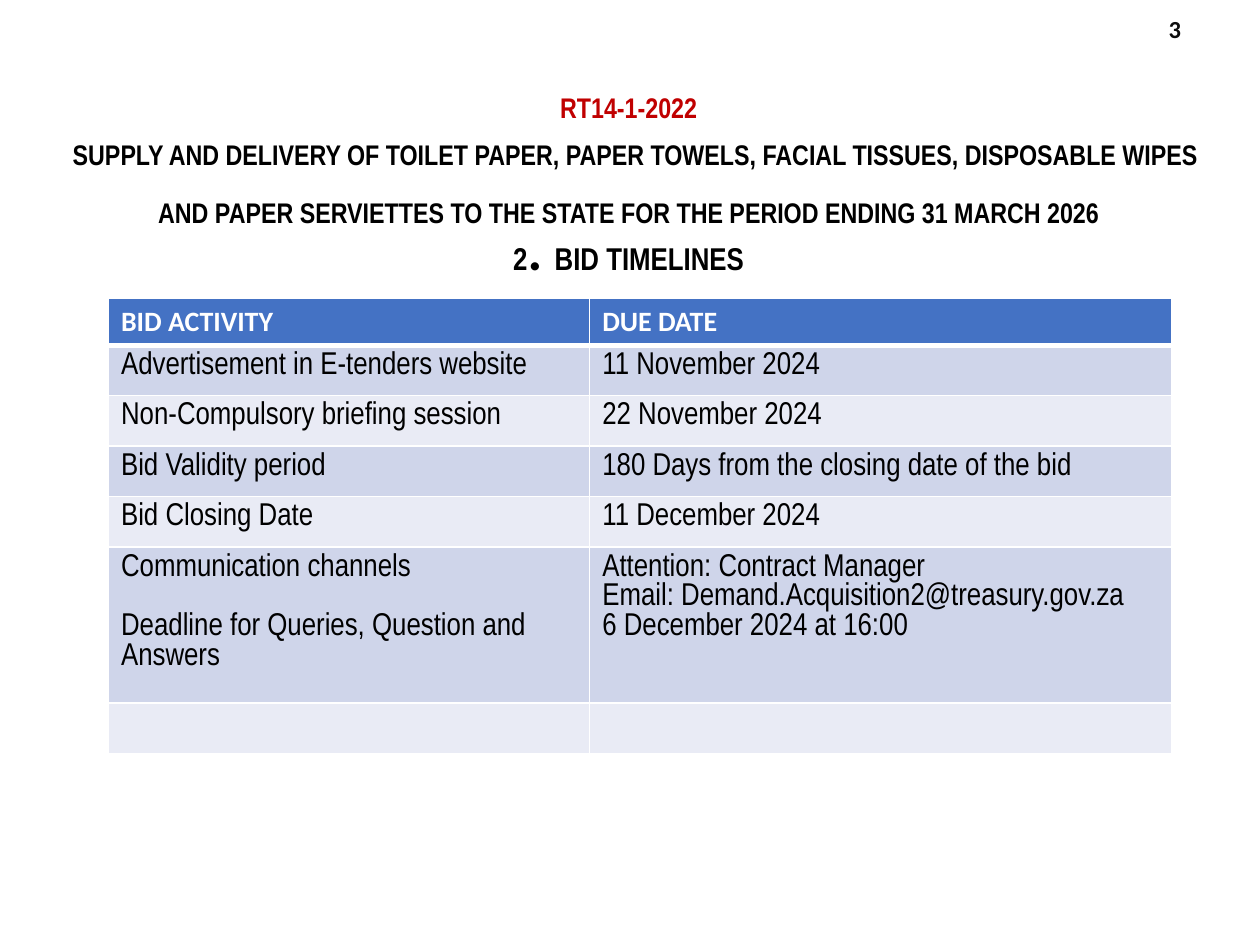
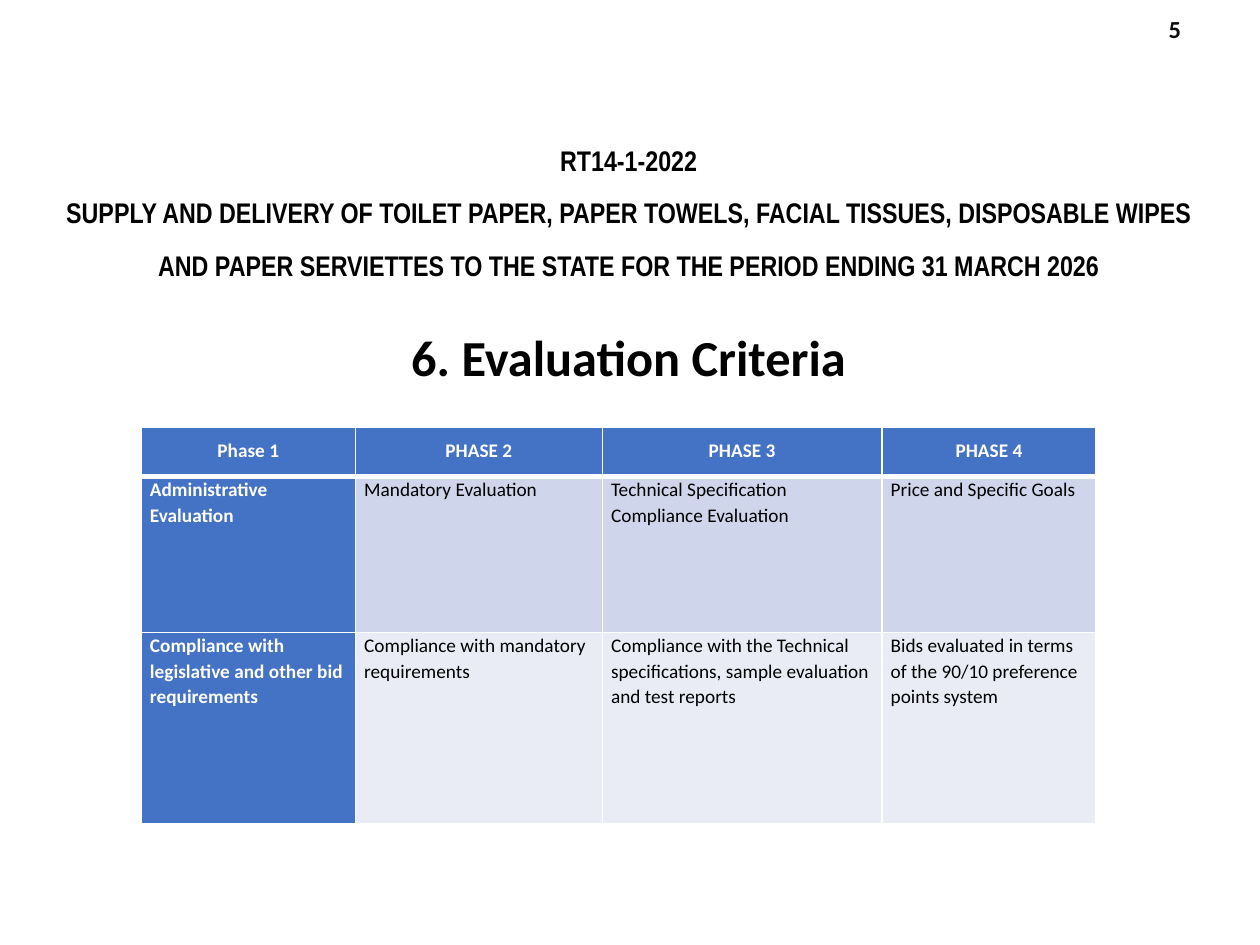
"""Build two bid briefing slides: the bid timelines and the evaluation criteria."""
from pptx import Presentation
from pptx.dml.color import RGBColor
from pptx.enum.text import MSO_ANCHOR as Anchor, PP_ALIGN as Align
from pptx.oxml import parse_xml
from pptx.oxml.ns import nsdecls
from pptx.util import Pt

BLACK = RGBColor(0x00, 0x00, 0x00)
WHITE = RGBColor(0xFF, 0xFF, 0xFF)
RED = RGBColor(0xC0, 0x00, 0x00)
NUMBER_GREY = RGBColor(0x0D, 0x0D, 0x0D)
BLUE = RGBColor(0x44, 0x72, 0xC4)
BANDS = [RGBColor(0xE9, 0xEB, 0xF5), RGBColor(0xCF, 0xD5, 0xEA)]
NARROW = "Arial Narrow"
CALIBRI = "Calibri"
BID_CODE = "RT14-1-2022"
BID_NAME = (
    "SUPPLY AND DELIVERY OF TOILET PAPER, PAPER TOWELS, FACIAL TISSUES, DISPOSABLE WIPES "
    "AND PAPER SERVIETTES TO THE STATE FOR THE PERIOD ENDING 31 MARCH 2026"
)


def set_font(font, name, size, color, bold):
    font.name = name
    font.size = Pt(size)
    font.color.rgb = color
    font.bold = bold


def add_grid(slide, left, top, widths, heights, rows):
    frame = slide.shapes.add_table(
        len(heights), len(widths), Pt(left), Pt(top), Pt(sum(widths)), Pt(sum(heights)))
    table = frame.table
    for column, width in zip(table.columns, widths):
        column.width = Pt(width)
    for row_index, (height, texts) in enumerate(zip(heights, rows)):
        table.rows[row_index].height = Pt(height)
        for column_index, text in enumerate(texts):
            cell = table.cell(row_index, column_index)
            cell.text = text
            properties = cell._tc.get_or_add_tcPr()
            edge_widths = {
                "lnL": 1, "lnR": 1,
                "lnT": 3 if row_index == 1 else 1,
                "lnB": 3 if row_index == 0 else 1,
            }
            for edge, width in edge_widths.items():
                properties.append(parse_xml(
                    f'<a:{edge} {nsdecls("a")} w="{Pt(width)}"><a:solidFill>'
                    f'<a:srgbClr val="{WHITE}"/></a:solidFill></a:{edge}>'))
            cell.fill.solid()
            cell.fill.fore_color.rgb = BANDS[row_index % 2] if row_index else BLUE
    return table


presentation = Presentation()
presentation.slide_width = Pt(720)
presentation.slide_height = Pt(540)

timeline_title = [
    [(BID_CODE, NARROW, 16.2, RED)],
    [(" ", NARROW, 32.4, BLACK), (BID_NAME, NARROW, 16.2, BLACK)],
    [("2", NARROW, 18, BLACK), (". ", CALIBRI, 31.5, BLACK), ("BID TIMELINES", NARROW, 18, BLACK)],
]
criteria_title = [
    [(BID_CODE, NARROW, 16.2, BLACK)],
    [(BID_NAME, NARROW, 16.2, BLACK)],
    [("6. Evaluation Criteria", CALIBRI, 28.8, BLACK)],
]

slides = []
for number, title_top, heading_gap, title in [
    ("3", 41, 0, timeline_title),
    ("5", 71, 30, criteria_title),
]:
    slide = presentation.slides.add_slide(presentation.slide_layouts[6])
    slides.append(slide)

    number_frame = slide.shapes.add_textbox(Pt(650), Pt(0), Pt(32), Pt(32.4)).text_frame
    number_frame.vertical_anchor = Anchor.MIDDLE
    number_frame.word_wrap = True
    paragraph = number_frame.paragraphs[0]
    paragraph.text = number
    paragraph.alignment = Align.RIGHT
    set_font(paragraph.font, CALIBRI, 14, NUMBER_GREY, True)

    title_frame = slide.shapes.add_textbox(
        Pt(23), Pt(title_top), Pt(672.5), Pt(120 + heading_gap)).text_frame
    title_frame.word_wrap = True
    title_frame.margin_top = title_frame.margin_bottom = 0
    for index, runs in enumerate(title):
        paragraph = title_frame.add_paragraph() if index else title_frame.paragraphs[0]
        paragraph.alignment = Align.CENTER
        paragraph.line_spacing = Pt(30)
        for text, name, size, color in runs:
            run = paragraph.add_run()
            run.text = text
            set_font(run.font, name, size, color, True)
    paragraph.space_before = Pt(heading_gap)

timeline_slide, criteria_slide = slides

timeline_rows = [
    ("BID ACTIVITY", "DUE DATE"),
    ("Advertisement in E-tenders website", "11 November 2024"),
    ("Non-Compulsory briefing session", "22 November 2024"),
    ("Bid Validity period", "180 Days from the closing date of the bid"),
    ("Bid Closing Date", "11 December 2024"),
    ("Communication channels\nDeadline for Queries, Question and Answers",
     "Attention: Contract Manager\nEmail: Demand.Acquisition2@treasury.gov.za\n"
     "6 December 2024 at 16:00"),
    ("", ""),
]
timeline = add_grid(timeline_slide, 62, 170.7, [275, 332.6],
                    [26.6, 26, 26, 24.2, 24.2, 75, 28.6], timeline_rows)
for row_index, row in enumerate(timeline.rows):
    for cell in row.cells:
        for paragraph in cell.text_frame.paragraphs:
            if row_index == 0:
                set_font(paragraph.font, CALIBRI, 16, WHITE, True)
            else:
                set_font(paragraph.font, NARROW, 18, BLACK, False)
timeline.cell(5, 0).text_frame.paragraphs[1].space_before = Pt(17)

criteria_rows = [
    ("Phase 1", "PHASE 2", "PHASE 3", "PHASE 4"),
    ("Administrative Evaluation", "Mandatory Evaluation",
     "Technical Specification Compliance Evaluation", "Price and Specific Goals"),
    ("Compliance with legislative and other bid requirements",
     "Compliance with mandatory requirements",
     "Compliance with the Technical specifications, sample evaluation and test reports",
     "Bids evaluated in terms of the 90/10 preference points system"),
]
criteria = add_grid(criteria_slide, 80.7, 244.3, [122.4, 141.1, 159.8, 122.4],
                    [28, 89.3, 109.4], criteria_rows)
criteria.first_col = True
for row_index, row in enumerate(criteria.rows):
    for column_index, cell in enumerate(row.cells):
        is_header = row_index == 0 or column_index == 0
        cell.margin_left = cell.margin_right = Pt(5)
        cell.margin_top = cell.margin_bottom = 0
        if is_header:
            cell.fill.fore_color.rgb = BLUE
        paragraph = cell.text_frame.paragraphs[0]
        paragraph.alignment = Align.LEFT if row_index else Align.CENTER
        paragraph.line_spacing = 1.07 if row_index else 1.5
        paragraph.space_after = Pt(8)
        set_font(paragraph.font, CALIBRI, 11, WHITE if is_header else BLACK, is_header)

presentation.save("out.pptx")
